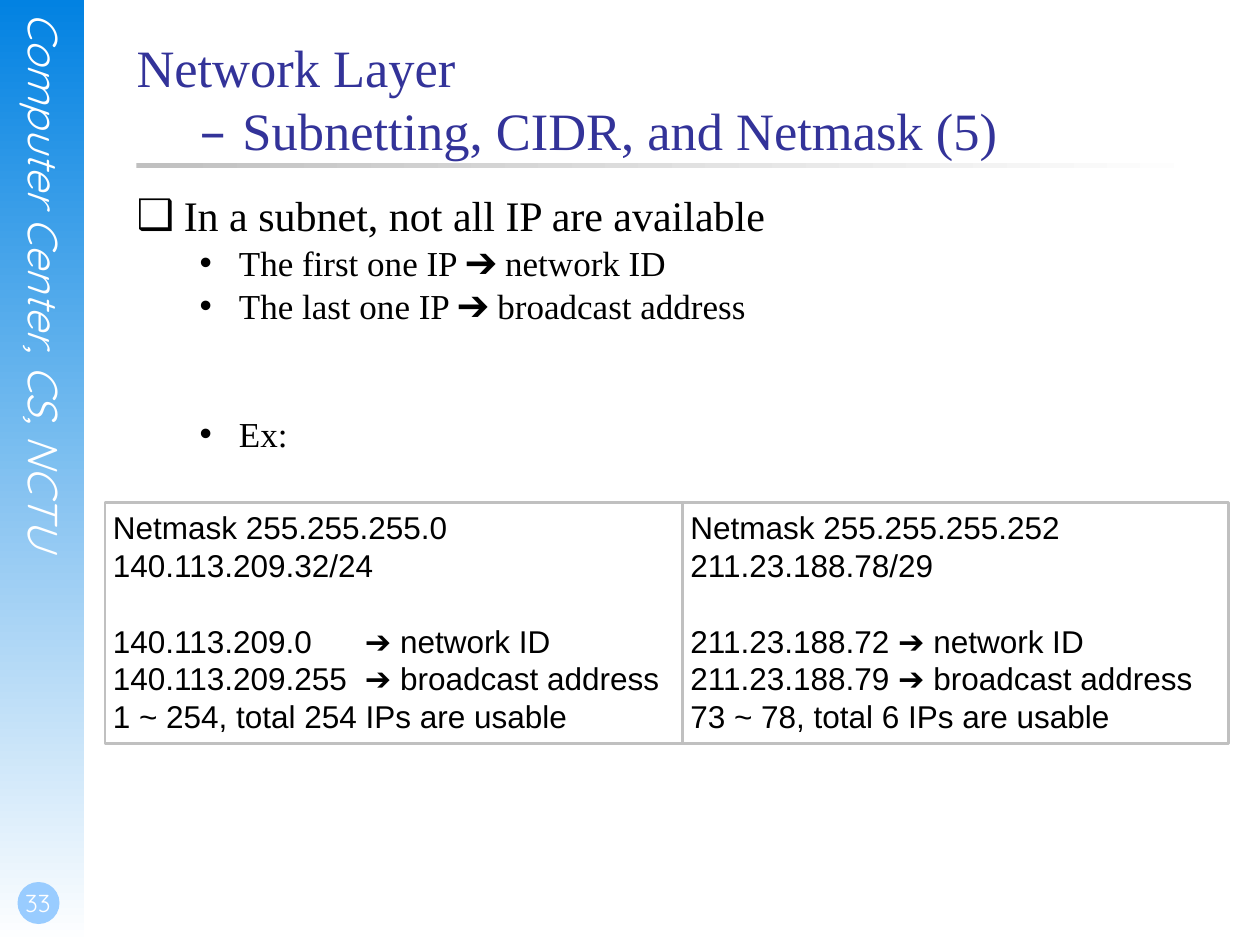
from dataclasses import dataclass

from lxml import etree
from pptx import Presentation
from pptx.dml.color import RGBColor
from pptx.enum.shapes import MSO_SHAPE
from pptx.enum.text import MSO_ANCHOR, MSO_AUTO_SIZE, PP_ALIGN
from pptx.oxml.ns import qn
from pptx.util import Pt

RECT, OVAL = MSO_SHAPE.RECTANGLE, MSO_SHAPE.OVAL
TOP, BOTTOM = MSO_ANCHOR.TOP, MSO_ANCHOR.BOTTOM
LEFT, CENTER = PP_ALIGN.LEFT, PP_ALIGN.CENTER
NO_FIT = MSO_AUTO_SIZE.NONE


@dataclass(frozen=True)
class Theme:
    serif: str = "Times New Roman"
    sans: str = "Arial"
    dash: str = "DejaVu Sans"
    side: str = "Quicksand"
    blue: str = "0282E2"
    pale_blue: str = "99CCFF"
    navy: str = "333399"
    grey: str = "C0C0C0"
    white: str = "FFFFFF"
    black: str = "000000"
    title: int = 30
    bullet: int = 24
    sub_bullet: int = 20
    example: int = 18
    banner: int = 24
    number: int = 14


T = Theme()


def rgb(color):
    return RGBColor.from_string(color)


def add_text(p, text, font=T.serif, size=T.example, color=T.black, italic=False):
    r = p.add_run()
    r.text = text
    r.font.name, r.font.size, r.font.italic = font, Pt(size), italic
    r.font.color.rgb = rgb(color)


def set_frame(tf, insets=(0, 0, 0, 0), anchor=TOP):
    tf.word_wrap, tf.auto_size, tf.vertical_anchor = True, NO_FIT, anchor
    tf.margin_left, tf.margin_top, tf.margin_right, tf.margin_bottom = map(Pt, insets)


def place(sp, x, y, w, h):
    sp.left, sp.top, sp.width, sp.height = Pt(x), Pt(y), Pt(w), Pt(h)


def add_shape(shapes, kind, x, y, w, h, fill=None, fade_angle=None, line=None):
    sp = shapes.add_shape(kind, Pt(x), Pt(y), Pt(w), Pt(h))
    sp.shadow.inherit = False
    if fade_angle is not None:
        sp.fill.gradient()
        sp.fill.gradient_angle = fade_angle
        for stop, color in zip(sp.fill.gradient_stops, (fill, T.white)):
            stop.color.rgb = rgb(color)
    elif fill:
        sp.fill.solid()
        sp.fill.fore_color.rgb = rgb(fill)
    else:
        sp.fill.background()
    if line:
        sp.line.color.rgb = rgb(line)
        sp.line.width = Pt(1.5)
    else:
        sp.line.fill.background()
    return sp


def set_bullet(p, char, left, hanging):
    pPr = p._p.get_or_add_pPr()
    pPr.set("marL", str(Pt(left)))
    pPr.set("indent", str(-Pt(hanging)))
    etree.SubElement(pPr, qn("a:buChar")).set("char", char)


def add_sidebar(s, x, y, w, h):
    add_shape(s.shapes, RECT, x, y, w, h, T.blue, fade_angle=270)
    # Vertical banner
    tf = s.shapes.add_textbox(Pt(x + 11), Pt(y + 7), Pt(29), Pt(368)).text_frame
    set_frame(tf)
    tf._txBody.bodyPr.set("vert", "eaVert")
    add_text(tf.paragraphs[0], "Computer Center, CS, NCTU", T.side, T.banner, T.white, True)
    # Page number
    add_shape(s.shapes, OVAL, x + 10, y + h - 36, 24, 24, T.pale_blue)
    tf = s.shapes.add_textbox(Pt(x), Pt(y + h - 48), Pt(42), Pt(36)).text_frame
    set_frame(tf, (1.5, 0, 0, 3.5), BOTTOM)
    tf.paragraphs[0].alignment = CENTER
    add_text(tf.paragraphs[0], "33", T.side, T.number, T.white)


def add_title(s, x, y, w, h):
    add_shape(s.shapes, RECT, x, y + 73, w, 3, T.grey, fade_angle=0)
    sp = s.shapes.title
    place(sp, x, y, w, h)
    set_frame(sp.text_frame)
    p = sp.text_frame.paragraphs[0]
    p.alignment = LEFT
    add_text(p, "Network Layer", T.serif, T.title, T.navy)
    p.add_line_break()
    for text, font in (("\t", T.serif), ("– ", T.dash),
                       ("Subnetting, CIDR, and Netmask (5)", T.serif)):
        add_text(p, text, font, T.title, T.navy)


def add_bullets(s, x, y, w, h):
    sp = s.placeholders[1]
    place(sp, x, y, w, h)
    tf = sp.text_frame
    set_frame(tf)
    # Text, level, space before
    items = (
        ("In a subnet, not all IP are available", 0, 6),
        ("The first one IP ➔ network ID", 1, 5.5),
        ("The last one IP ➔ broadcast address", 1, 5.5),
        ("Ex:", 1, 54),
    )
    styles = (("❑", 27, 27, T.bullet), ("•", 58.5, 22.5, T.sub_bullet))
    for i, (text, level, gap) in enumerate(items):
        p = tf.add_paragraph() if i else tf.paragraphs[0]
        char, left, hanging, size = styles[level]
        p.level, p.line_spacing, p.space_before = level, 0.8, Pt(gap)
        set_bullet(p, char, left, hanging)
        add_text(p, text, size=size)


def add_examples(s, x, y, w, h):
    group = s.shapes.add_group_shape()
    split = 330
    examples = (
        (x, split, ("Netmask 255.255.255.0", "140.113.209.32/24",
                    "140.113.209.0\t➔ network ID",
                    "140.113.209.255\t➔ broadcast address",
                    "1 ~ 254, total 254 IPs are usable")),
        (x + split, w - split, ("Netmask 255.255.255.252", "211.23.188.78/29",
                                "211.23.188.72 ➔ network ID",
                                "211.23.188.79 ➔ broadcast address",
                                "73 ~ 78, total 6 IPs are usable")),
    )
    for left, width, lines in examples:
        sp = add_shape(group.shapes, RECT, left, y, width, h, line=T.grey)
        tf = sp.text_frame
        set_frame(tf, (4.5, 3.5, 1.5, 3.5))
        for i, line in enumerate(lines):
            p = tf.add_paragraph() if i else tf.paragraphs[0]
            p.alignment = LEFT
            if i == 2:  # the host range stands apart from the netmask
                p.space_before = Pt(21.5)
            add_text(p, line, T.sans, T.example)


def main():
    prs = Presentation()
    prs.slide_width, prs.slide_height = Pt(720), Pt(540)
    s = prs.slides.add_slide(prs.slide_layouts[1])
    add_sidebar(s, 0, 0, 48, 540)
    add_title(s, 78, 20, 612, 90)
    add_bullets(s, 78, 114, 558, 378)
    add_examples(s, 60, 287, 642, 138)
    prs.save("out.pptx")


if __name__ == "__main__":
    main()
